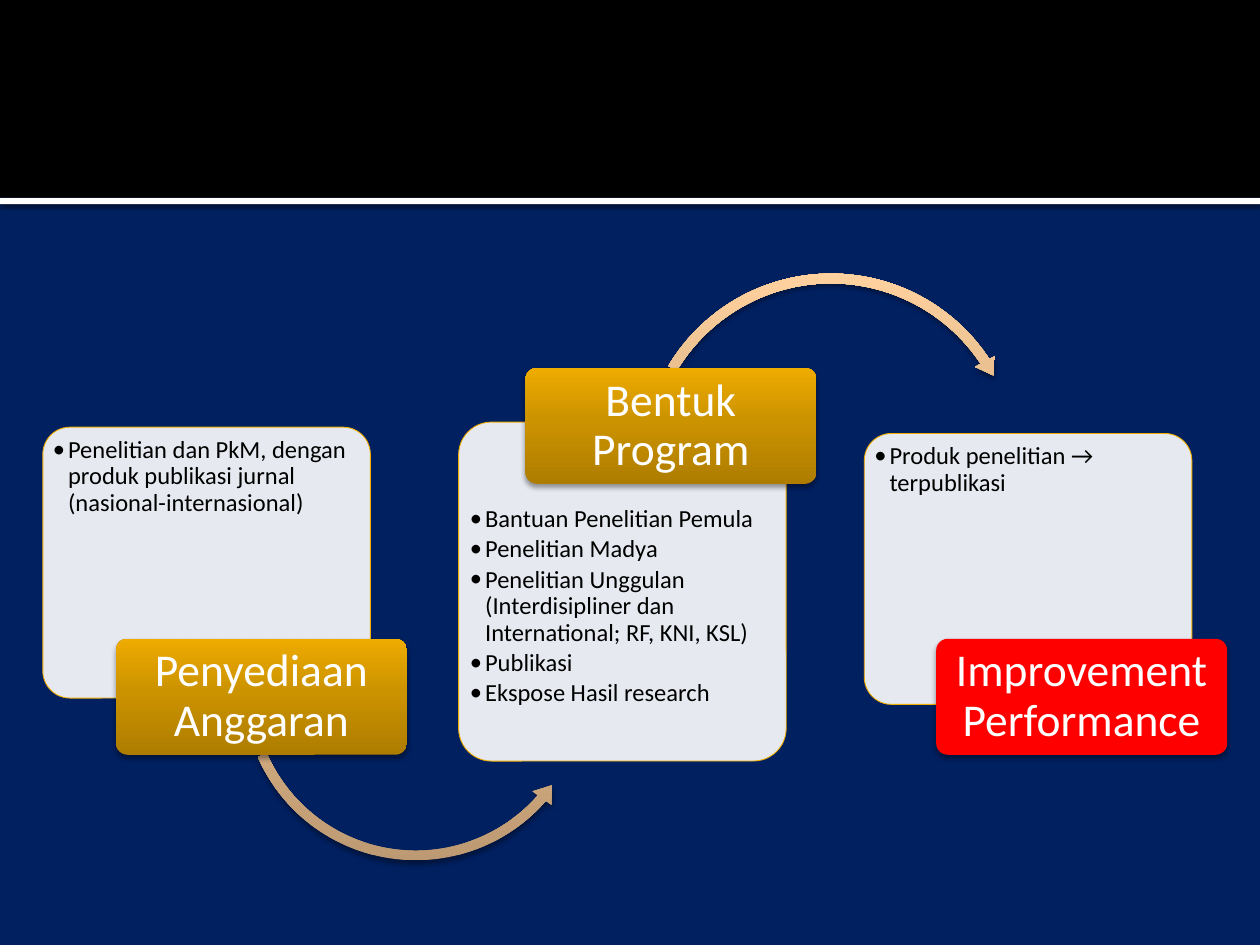
from lxml.etree import SubElement
from copy import deepcopy
from pptx import Presentation
from pptx.dml.color import RGBColor
from pptx.enum.shapes import MSO_SHAPE as Preset
from pptx.enum.text import MSO_ANCHOR as Anchor, MSO_AUTO_SIZE as AutoSize, PP_ALIGN as Align
from pptx.oxml.ns import qn
from pptx.util import Inches, Pt

NAVY = RGBColor(0x00, 0x20, 0x60)
BLACK = RGBColor(0x00, 0x00, 0x00)
WHITE = RGBColor(0xFF, 0xFF, 0xFF)
AMBER = RGBColor(0xF0, 0xAD, 0x00)
RED = RGBColor(0xFF, 0x00, 0x00)
GOLD_BLEND = (RGBColor(0xAE, 0x7D, 0x00), RGBColor(0xCC, 0x93, 0x00), RGBColor(0xEE, 0xAB, 0x00))
SAND_BLEND = (RGBColor(0xBC, 0x99, 0x72), RGBColor(0xDD, 0xB4, 0x86), RGBColor(0xFF, 0xD2, 0x9F))
BLEND_STOPS = (0, 0.55, 1)
LAYOUT_WITH_LISTS = 4
LIST_SLOTS = (2, 4, 1)

CARDS = [
    ((0.34, 3.39, 2.6, 2.15), (0.39, 3.44, 2.5, 1.59),
     ["Penelitian dan PkM, dengan produk publikasi jurnal (nasional-internasional)"]),
    ((3.64, 3.35, 2.6, 2.69), (3.7, 3.99, 2.48, 1.99),
     ["Bantuan Penelitian Pemula", "Penelitian Madya",
      "Penelitian Unggulan (Interdisipliner dan International; RF, KNI, KSL)",
      "Publikasi", "Ekspose Hasil research"]),
    ((6.86, 3.44, 2.6, 2.15), (6.91, 3.49, 2.5, 1.59),
     ["Produk penelitian → terpublikasi"]),
]
ARROWS = [
    (Preset.LEFT_CIRCULAR_ARROW, (1.88, 4.04, 2.84, 2.84), (0.027, 3.332, 24.657, 93.815, 0.032)),
    (Preset.CIRCULAR_ARROW, (5.04, 2.12, 3.11, 3.11), (0.025, 3.025, 195.964, 126.499, 0.029)),
]
LABELS = [
    ("Penyediaan Anggaran", 0.92, 5.07, GOLD_BLEND),
    ("Bentuk Program", 4.17, 2.92, GOLD_BLEND),
    ("Improvement Performance", 7.43, 5.07, RED),
]


class SlideBuilder:
    """Holds the style and the current slide, and draws each kind of element."""

    font_name = "Calibri"
    list_size = Pt(14)
    label_size = Pt(26)

    def __init__(self, page):
        self.page = page

    def background(self, color):
        fill = self.page.background.fill
        fill.solid()
        fill.fore_color.rgb = color

    def shape(self, preset, place, paint, adjustments=()):
        box = self.page.shapes.add_shape(preset, *map(Inches, place))
        for index, value in enumerate(adjustments):
            box.adjustments[index] = value
        box.line.fill.background()
        box.shadow.inherit = False
        if isinstance(paint, RGBColor):
            box.fill.solid()
            box.fill.fore_color.rgb = paint
        else:
            self.blend(box, paint)
        return box

    def blend(self, box, colors):
        box.fill.gradient()
        box.fill.gradient_angle = 90
        stop_list = box._element.spPr.find(qn("a:gradFill")).find(qn("a:gsLst"))
        stop_list.append(deepcopy(stop_list[0]))
        for stop, position, color in zip(box.fill.gradient_stops, BLEND_STOPS, colors):
            stop.position = position
            stop.color.rgb = color

    def shadow(self, box, opacity=38, blur=3.1, distance=2):
        effects = box._element.spPr.find(qn("a:effectLst"))
        outer = SubElement(effects, qn("a:outerShdw"), blurRad=str(Pt(blur)),
                           dist=str(Pt(distance)), dir="5400000", rotWithShape="0")
        color = SubElement(outer, qn("a:srgbClr"), val=str(BLACK))
        SubElement(color, qn("a:alpha"), val=str(opacity * 1000))

    def card(self, place):
        box = self.shape(Preset.ROUNDED_RECTANGLE, place, WHITE, [0.1])
        color = box._element.spPr.find(qn("a:solidFill")).find(qn("a:srgbClr"))
        SubElement(color, qn("a:alpha"), val="90000")
        box.line.color.rgb = AMBER
        box.line.width = Pt(0.5)

    def frame(self, box, anchor, side, top):
        frame = box.text_frame
        frame.word_wrap = True
        frame.auto_size = AutoSize.NONE
        frame.vertical_anchor = anchor
        frame.margin_left = frame.margin_right = Inches(side)
        frame.margin_top = frame.margin_bottom = Inches(top)
        return frame

    def add_text(self, para, text, size, color, align):
        para.alignment = align
        para.line_spacing = 0.9
        para.space_before = Pt(0)
        span = para.add_run()
        span.text = text
        span.font.name = self.font_name
        span.font.size = size
        span.font.bold = False
        span.font.color.rgb = color

    def bullets(self, slot, place, items):
        box = next(item for item in self.page.placeholders if item.placeholder_format.idx == slot)
        box.left, box.top, box.width, box.height = map(Inches, place)
        self.page.shapes._spTree.append(box._element)
        frame = self.frame(box, Anchor.TOP, 0.03, 0.03)
        for index, item in enumerate(items):
            para = frame.add_paragraph() if index else frame.paragraphs[0]
            para.level = 1
            self.add_text(para, item, self.list_size, BLACK, Align.LEFT)
            para.space_after = Pt(2.1)
            settings = para._p.get_or_add_pPr()
            settings.set("marL", str(Inches(0.12)))
            settings.set("indent", str(-Inches(0.12)))
            SubElement(settings, qn("a:buFont"), typeface=self.font_name)
            SubElement(settings, qn("a:buChar"), char="•")

    def arrow(self, preset, place, adjustments):
        self.shadow(self.shape(preset, place, SAND_BLEND, adjustments))

    def label(self, text, left, top, paint):
        box = self.shape(Preset.ROUNDED_RECTANGLE, (left, top, 2.31, 0.92), paint, [0.1])
        self.shadow(box)
        frame = self.frame(box, Anchor.MIDDLE, 0.07, 0.07)
        self.add_text(frame.paragraphs[0], text, self.label_size, WHITE, Align.CENTER)

    def remove_empty_placeholders(self):
        for box in list(self.page.placeholders):
            if not box.text_frame.text:
                box._element.getparent().remove(box._element)


def main():
    deck = Presentation()
    deck.slide_width, deck.slide_height = Inches(10), Inches(7.5)
    builder = SlideBuilder(deck.slides.add_slide(deck.slide_layouts[LAYOUT_WITH_LISTS]))
    builder.background(NAVY)
    rule = builder.shape(Preset.RECTANGLE, (0, 1.57, 10, 0.05), WHITE)
    builder.shadow(rule, 60, 2.5, 0.8)
    builder.shape(Preset.RECTANGLE, (0, 0, 10, 1.57), BLACK)
    for slot, (card_place, list_place, items) in zip(LIST_SLOTS, CARDS):
        builder.card(card_place)
        builder.bullets(slot, list_place, items)
    for arrow in ARROWS:
        builder.arrow(*arrow)
    for label in LABELS:
        builder.label(*label)
    builder.remove_empty_placeholders()
    deck.save("out.pptx")


if __name__ == "__main__":
    main()
